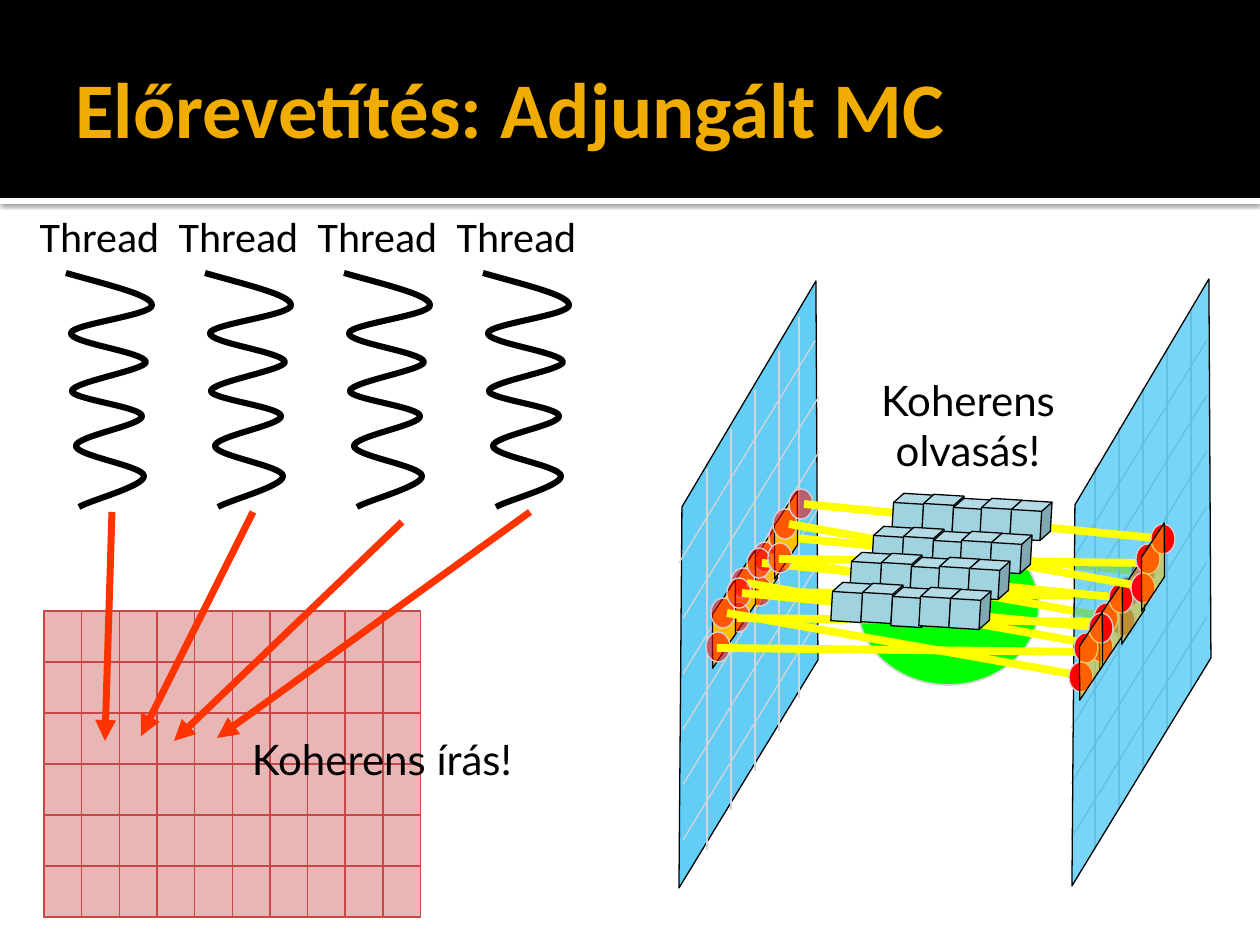
from lxml import etree
from pptx import Presentation
from pptx import util as u
from pptx.dml.color import RGBColor
from pptx.enum import shapes, text
from pptx.oxml import parse_xml
from pptx.oxml.ns import nsdecls, qn

PX = 914400 / 126
COLORS = {
    "black": "000000", "white": "FFFFFF", "title": "F0AD00", "cell": "E8B6B5",
    "cell_border": "C64847", "arrow": "FF3300", "sheet": "00B0F0", "grid": "D4D4D6",
    "patch": "FFC000", "hit": "FF0000", "volume": "00FF00", "ray": "FFFF00",
    "cube": "A0D3E0",
}
SHAPE = shapes.MSO_SHAPE

THREAD_COUNT, THREAD_PITCH = 4, 139
# Start point, then three points for each Bezier segment
THREAD_CURVE = [
    (66, 273),
    (108, 285), (152, 295), (152, 305), (154, 315), (72, 324), (71, 333),
    (69, 343), (145, 352), (146, 362), (146, 370), (72, 382), (72, 391),
    (71, 399), (142, 407), (142, 416), (144, 425), (76, 436), (76, 446),
    (76, 456), (144, 466), (144, 476), (145, 486), (91, 500), (79, 507),
]
WRITE_ARROWS = [
    ((112, 512), (105, 741)), ((253, 512), (141, 736)),
    ((402, 522), (174, 741)), ((530, 512), (217, 738)),
]
TABLE_ROWS, TABLE_COLUMNS = 6, 10

LEFT_SHEET = [(682, 507), (679, 888), (818, 660), (816, 281)]
RIGHT_SHEET = [(x + 393, y - 2) for x, y in LEFT_SHEET]
LEFT_GRID = {"columns": [707, 731, 755, 779, 799], "top": 469,
             "row_ends": [815] + [819] * 5, "row_top": 341}
RIGHT_GRID = {"columns": range(1095, 1192, 24), "top": 467,
              "row_ends": [1207] * 6, "row_top": 340}

SLICE_OFFSETS = [(0, 0), (-22, 26), (-42, 56), (20, -33)]
LEFT_PATCH, RIGHT_PATCH = (723, 553), (1090, 585)
LEFT_HITS = [(753, 542), (748, 576), (769, 522)]
RIGHT_HITS = [(1116, 577), (1111, 606), (1131, 557)]
RAYS = [((784, 537), (1145, 572)), ((769, 557), (1131, 621)), ((759, 592), (1131, 596))]
CUBE_ROWS = [(893, 494), (873, 527), (851, 553), (832, 583)]
CUBE_STEPS = [(0, 0), (30, 1), (60, 5), (88, 5), (118, 7)]

presentation = Presentation()
presentation.slide_width, presentation.slide_height = u.Inches(10), u.Inches(7.5)
slide = presentation.slides.add_slide(presentation.slide_layouts[6])


def px(value):
    return u.Emu(round(value * PX))


def rgb(name):
    return RGBColor.from_string(COLORS[name])


def style(shape, fill=None, line=None, width=0.75, opacity=100):
    shape.shadow.inherit = False
    if fill:
        shape.fill.solid()
        shape.fill.fore_color.rgb = rgb(fill)
        if opacity < 100:
            color = shape.fill._xPr.find(".//" + qn("a:srgbClr"))
            etree.SubElement(color, qn("a:alpha"), val=str(opacity * 1000))
    else:
        shape.fill.background()
    if line:
        shape.line.color.rgb = rgb(line)
        shape.line.width = u.Pt(width)
    else:
        shape.line.fill.background()
    return shape


def add_box(kind, x, y, width, height, *look, opacity=100, parent=slide.shapes):
    shape = parent.add_shape(kind, px(x), px(y), px(width), px(height))
    return style(shape, *look, opacity=opacity)


def add_line(start, end, color, width, arrow=False):
    line = slide.shapes.add_connector(
        shapes.MSO_CONNECTOR.STRAIGHT, *map(px, (*start, *end)))
    line.line.color.rgb = rgb(color)
    line.line.width = u.Pt(width)
    if arrow:
        etree.SubElement(line.line._get_or_add_ln(), qn("a:tailEnd"), type="triangle")
    etree.SubElement(line._element.spPr, qn("a:effectLst"))


def add_outline(points, close):
    builder = slide.shapes.build_freeform(*points[0], scale=PX)
    builder.add_line_segments(points[1:], close=close)
    return builder.convert_to_shape()


def add_text(words, x, y, width, height, font="Calibri", size=24, color="black"):
    box = slide.shapes.add_textbox(*map(px, (x, y, width, height)))
    box.text_frame.word_wrap = True
    paragraph = box.text_frame.paragraphs[0]
    paragraph.alignment = text.PP_ALIGN.CENTER
    run = paragraph.add_run()
    run.text = words
    run.font.name, run.font.size = font, u.Pt(size)
    run.font.color.rgb = rgb(color)
    return box


def add_header():
    strip = add_box(SHAPE.RECTANGLE, 0, 198, 1260, 6, "white")
    effects = strip._element.spPr.find(qn("a:effectLst"))
    effects.append(parse_xml(
        f'<a:outerShdw {nsdecls("a")} blurRad="31750" dist="10160" dir="5400000">'
        '<a:srgbClr val="000000"><a:alpha val="60000"/></a:srgbClr></a:outerShdw>'))
    add_box(SHAPE.RECTANGLE, 0, 0, 1260, 198, "black")
    title = add_text("Előrevetítés: Adjungált MC", 63, 21, 1134, 173, size=45, color="title")
    title.text_frame.vertical_anchor = text.MSO_ANCHOR.MIDDLE
    title.text_frame.margin_right = u.Inches(0.05)
    paragraph = title.text_frame.paragraphs[0]
    paragraph.alignment = text.PP_ALIGN.LEFT
    paragraph.runs[0].font.bold = True


def add_memory_table():
    table = slide.shapes.add_table(
        TABLE_ROWS, TABLE_COLUMNS, px(44), px(611), px(377), px(306)).table
    for cell in table.iter_cells():
        cell.fill.solid()
        cell.fill.fore_color.rgb = rgb("cell")
        for position, side in enumerate(("lnL", "lnR", "lnT", "lnB")):
            cell._tc.get_or_add_tcPr().insert(position, parse_xml(
                f'<a:{side} {nsdecls("a")} w="12700"><a:solidFill>'
                f'<a:srgbClr val="{COLORS["cell_border"]}"/></a:solidFill></a:{side}>'))


def add_thread(shift):
    curve = add_outline([(x + shift, y) for x, y in THREAD_CURVE], close=False)
    style(curve, None, "black", 3.5)
    # Turn every three straight segments into one Bezier segment
    segments = list(curve._element.iter(qn("a:lnTo")))
    for first in range(0, len(segments), 3):
        bezier = etree.Element(qn("a:cubicBezTo"))
        segments[first].addprevious(bezier)
        for segment in segments[first:first + 3]:
            bezier.append(segment[0])
            segment.getparent().remove(segment)
    add_text("Thread", 5 + shift, 204, 189, 63)


def add_sheet(points, opacity):
    style(add_outline(points, close=True), "sheet", "black", opacity=opacity)


def add_grid(columns, top, row_ends, row_top):
    for x in columns:
        y = top - (x - columns[0]) * 1.65
        add_line((x, y), (x, y + 381), "grid", 0.75)
    for index, x in enumerate(row_ends):
        y = row_top + index * 55.4
        add_line((x, y), (x - 136, y + 222), "grid", 0.75)


def add_patch(corner, dx, dy, opacity=100):
    patch = add_box(SHAPE.PARALLELOGRAM, corner[0] + dx, corner[1] + dy, 86, 30,
                    "patch", "black", opacity=opacity)
    patch.adjustments[0] = 1.49
    patch.rotation = 303.6


def add_hits(corners, dx, dy, opacity=100):
    for x, y in corners:
        add_box(SHAPE.OVAL, x + dx, y + dy, 24, 30, "hit", "grid", opacity=opacity)


add_header()
add_memory_table()
for index in range(THREAD_COUNT):
    add_thread(index * THREAD_PITCH)
for start, end in WRITE_ARROWS:
    add_line(start, end, "arrow", 4, arrow=True)

add_sheet(LEFT_SHEET, 61)
add_box(SHAPE.OVAL, 858, 527, 181, 158, "volume", "grid", 1)
for index, (dx, dy) in enumerate(SLICE_OFFSETS):
    add_patch(LEFT_PATCH, dx, dy)
    if index == 0:
        add_grid(**LEFT_GRID)
    add_hits(LEFT_HITS, dx, dy, opacity=54)
    for (x1, y1), (x2, y2) in RAYS:
        add_line((x1 + dx, y1 + dy), (x2 + dx, y2 + dy), "ray", 4.5)
    add_hits(RIGHT_HITS, dx, dy)
    if index == 0:
        add_grid(**RIGHT_GRID)
        add_sheet(RIGHT_SHEET, 53)
    add_patch(RIGHT_PATCH, dx, dy, opacity=50)

for left, top in CUBE_ROWS:
    group = slide.shapes.add_group_shape()
    for dx, dy in CUBE_STEPS:
        cube = add_box(SHAPE.CUBE, left + dx, top + dy, 40, 39, "cube", "black",
                       parent=group.shapes)
        cube.rotation = 3.4

add_text("Koherens olvasás!", 809, 368, 318, 115, font="Lato")
add_text("Koherens írás!", 223, 727, 318, 63, font="Lato")
presentation.save("out.pptx")
